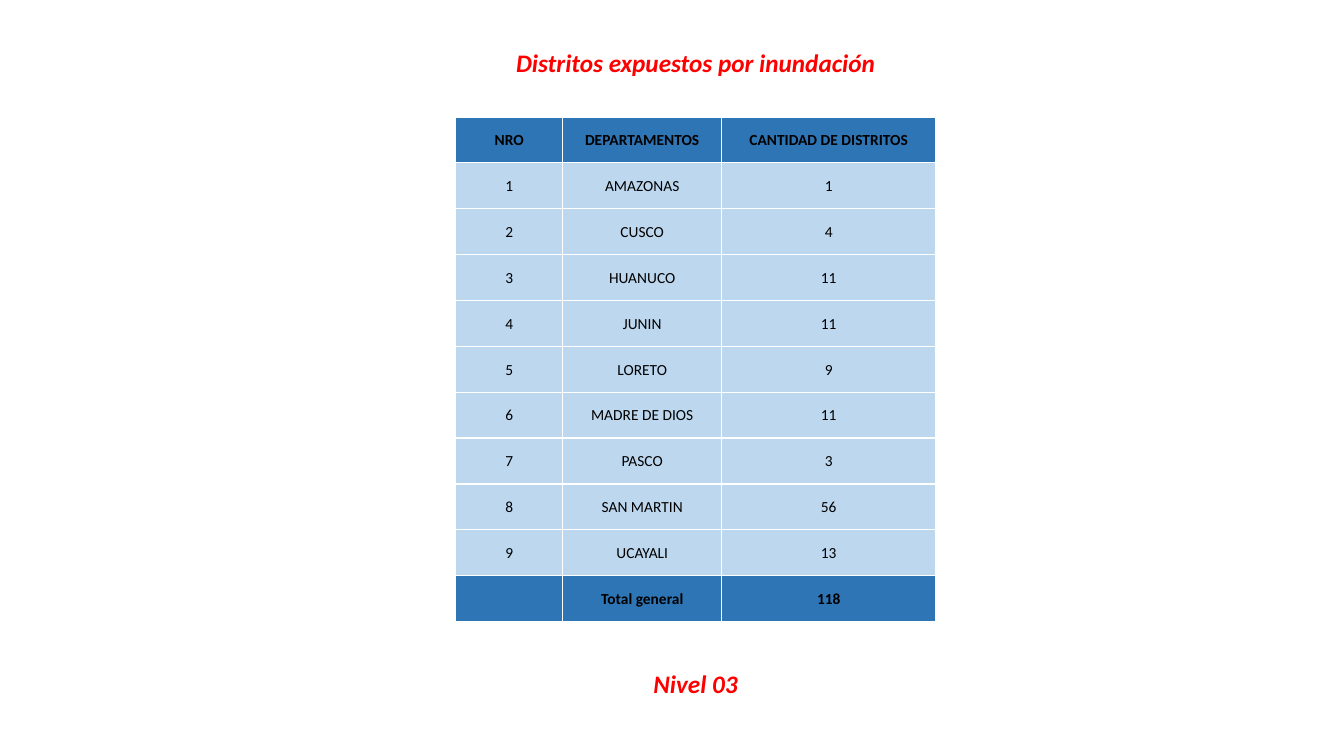
import pptx
import pptx.dml.color
import pptx.enum.text
import pptx.oxml
import pptx.oxml.ns
import pptx.util

Inches = pptx.util.Inches
RGBColor = pptx.dml.color.RGBColor

RED = RGBColor(0xFF, 0x00, 0x00)
BLACK = RGBColor(0x00, 0x00, 0x00)
WHITE = RGBColor(0xFF, 0xFF, 0xFF)
BLUE = RGBColor(0x2E, 0x75, 0xB6)
LIGHT_BLUE = RGBColor(0xBD, 0xD7, 0xEE)

HEADER = ("NRO", "DEPARTAMENTOS", "CANTIDAD DE DISTRITOS")
DISTRICTS = (
    ("AMAZONAS", 1),
    ("CUSCO", 4),
    ("HUANUCO", 11),
    ("JUNIN", 11),
    ("LORETO", 9),
    ("MADRE DE DIOS", 11),
    ("PASCO", 3),
    ("SAN MARTIN", 56),
    ("UCAYALI", 13),
)
TOTAL = ("", "Total general", 118)


def write_text(tf, text, font="Calibri", size=11, color=BLACK, bold=False, italic=False):
    p = tf.paragraphs[0]
    p.alignment = pptx.enum.text.PP_ALIGN.CENTER
    r = p.add_run()
    r.text = text
    r.font.name = font
    r.font.size = pptx.util.Pt(size)
    r.font.color.rgb = color
    r.font.bold = bold
    r.font.italic = italic


class SlideBuilder:
    font = "Calibri"
    border_width = pptx.util.Pt(1)

    def __init__(self, prs):
        self.slide = prs.slides.add_slide(prs.slide_layouts[6])

    def heading(self, text, left, top, width, height, wrap=True):
        sp = self.slide.shapes.add_textbox(
            Inches(left), Inches(top), Inches(width), Inches(height))
        tf = sp.text_frame
        tf.word_wrap = wrap
        tf.auto_size = pptx.enum.text.MSO_AUTO_SIZE.SHAPE_TO_FIT_TEXT
        write_text(tf, text, font=self.font, size=18, color=RED, bold=True, italic=True)

    def table(self, rows, left, top, height, col_widths):
        """Draw rows as a table whose first and last rows are emphasised."""
        table = self.slide.shapes.add_table(
            len(rows), len(col_widths), Inches(left), Inches(top),
            Inches(sum(col_widths)), Inches(height)).table
        for column, width in zip(table.columns, col_widths):
            column.width = Inches(width)
        for i, row in enumerate(rows):
            strong = i in (0, len(rows) - 1)
            for j, value in enumerate(row):
                self.cell(table.cell(i, j), str(value), strong)

    def cell(self, cell, text, strong):
        cell.vertical_anchor = pptx.enum.text.MSO_ANCHOR.MIDDLE
        cell.margin_left = cell.margin_right = cell.margin_top = Inches(0.01)
        cell.margin_bottom = 0
        self.borders(cell)
        cell.fill.solid()
        cell.fill.fore_color.rgb = BLUE if strong else LIGHT_BLUE
        if text:
            write_text(cell.text_frame, text, font=self.font, bold=strong)

    def borders(self, cell):
        """Add the four border lines; they must precede the fill in the XML."""
        tc_pr = cell._tc.get_or_add_tcPr()
        for side in ("lnL", "lnR", "lnT", "lnB"):
            tc_pr.append(pptx.oxml.parse_xml(
                f'<a:{side} {pptx.oxml.ns.nsdecls("a")} w="{self.border_width}">'
                f'<a:solidFill><a:srgbClr val="{WHITE}"/></a:solidFill></a:{side}>'))


def main():
    prs = pptx.Presentation()
    prs.slide_width = Inches(13.33)
    prs.slide_height = Inches(7.5)

    s = SlideBuilder(prs)
    s.heading("Distritos expuestos por inundación", 5, 0.42, 3.8, 0.4, wrap=False)
    s.heading("Nivel 03", 6.3, 6.58, 1.2, 0.4)
    numbered = [(n, *district) for n, district in enumerate(DISTRICTS, 1)]
    s.table([HEADER, *numbered, TOTAL], 4.52, 1.16, 5.01, (1.06, 1.58, 2.12))

    prs.save("out.pptx")


if __name__ == "__main__":
    main()
